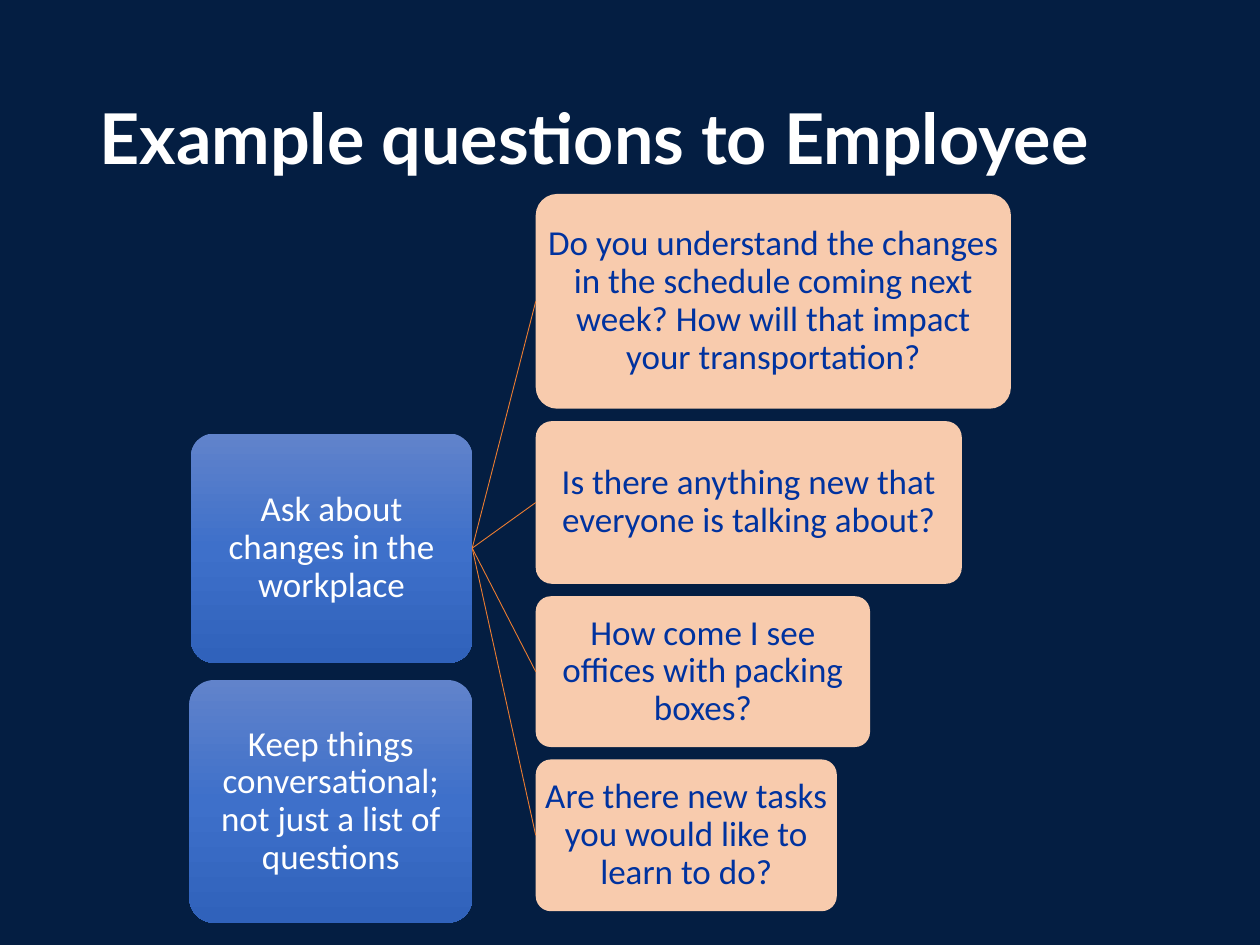
from copy import deepcopy

from lxml.etree import SubElement
from pptx import Presentation
from pptx.dml.color import RGBColor
from pptx.enum.shapes import MSO_CONNECTOR, MSO_SHAPE
from pptx.enum.text import MSO_ANCHOR, MSO_AUTO_SIZE, PP_ALIGN
from pptx.oxml.ns import qn
from pptx.util import Cm, Pt

# Content
TITLE = "Example questions to Employee"
# Topics: text, top, width, height (cm)
TOPICS = [
    ("Ask about changes in the workplace", 8.74, 5.67, 4.62),
    ("Keep things conversational; not just a list of questions", 13.71, 5.7, 4.89),
]
# Questions on the first topic: text, width, height (cm)
QUESTIONS = [
    ("Do you understand the changes in the schedule coming next week? "
     "How will that impact your transportation?", 9.58, 4.33),
    ("Is there anything new that everyone is talking about?", 8.59, 3.28),
    ("How come I see offices with packing boxes?", 6.74, 3.04),
    ("Are there new tasks you would like to learn to do?", 6.07, 3.06),
]

COLORS = {
    "background": "041E42",
    "white": "FFFFFF",
    "question": "F8CBAD",
    "question_text": "00329F",
    "link": "ED7D31",
}
TOPIC_GRADIENT = [(0, "6183CB"), (0.5, "3E70CA"), (1, "3062BB")]

# Layout (cm)
TOPIC_RIGHT = 9.52
QUESTION_LEFT = 10.8
QUESTION_TOP = 3.91
QUESTION_GAP = 0.25


def format_text(paragraph, font_name, size, color, bold=False):
    paragraph.line_spacing = 0.9
    for run in paragraph.runs:
        run.font.name = font_name
        run.font.size = Pt(size)
        run.font.bold = bold
        run.font.color.rgb = RGBColor.from_string(color)


def add_box(slide, text, left, top, width, height, text_color):
    shape = slide.shapes.add_shape(
        MSO_SHAPE.ROUNDED_RECTANGLE, Cm(left), Cm(top), Cm(width), Cm(height))
    shape.adjustments[0] = 0.1
    shape.shadow.inherit = False
    shape.line.fill.background()
    frame = shape.text_frame
    frame.word_wrap = True
    frame.vertical_anchor = MSO_ANCHOR.MIDDLE
    frame.margin_left = frame.margin_right = Cm(0.03)
    frame.margin_top = frame.margin_bottom = Cm(0.03)
    frame.text = text
    paragraph = frame.paragraphs[0]
    paragraph.alignment = PP_ALIGN.CENTER
    format_text(paragraph, "Calibri", 20, text_color)
    return shape


def fill_gradient(shape, stops):
    shape.fill.gradient()
    shape.fill.gradient_angle = 270
    stop_list = shape._element.spPr.find(qn("a:gradFill")).find(qn("a:gsLst"))
    while len(stop_list) < len(stops):
        stop_list.append(deepcopy(stop_list[0]))
    for stop, (position, color) in zip(shape.fill.gradient_stops, stops):
        stop.position = position
        stop.color.rgb = RGBColor.from_string(color)


def link(slide, topic, question):
    connector = slide.shapes.add_connector(MSO_CONNECTOR.STRAIGHT, 0, 0, 0, 0)
    connector.begin_connect(topic, 3)  # right side
    connector.end_connect(question, 1)  # left side
    connector.line.color.rgb = RGBColor.from_string(COLORS["link"])
    connector.line.width = Pt(0.5)
    SubElement(connector._element.spPr, qn("a:effectLst"))


def main():
    presentation = Presentation()
    presentation.slide_width, presentation.slide_height = Cm(25.4), Cm(19.05)
    slide = presentation.slides.add_slide(presentation.slide_layouts[5])
    slide.background.fill.solid()
    slide.background.fill.fore_color.rgb = RGBColor.from_string(COLORS["background"])

    # Title
    title = slide.shapes.title
    title.left, title.top, title.width, title.height = Cm(1.75), Cm(1.02), Cm(21.9), Cm(3.68)
    title.text_frame.text = TITLE
    title.text_frame.auto_size = MSO_AUTO_SIZE.NONE
    title.text_frame.vertical_anchor = MSO_ANCHOR.MIDDLE
    title.text_frame.paragraphs[0].alignment = PP_ALIGN.LEFT
    format_text(title.text_frame.paragraphs[0], "Lato", 40, COLORS["white"], bold=True)

    # Topics, aligned on their right edge
    topics = []
    for text, top, width, height in TOPICS:
        topic = add_box(slide, text, TOPIC_RIGHT - width, top, width, height, COLORS["white"])
        fill_gradient(topic, TOPIC_GRADIENT)
        topics.append(topic)

    # Questions, stacked and linked to the first topic
    top = QUESTION_TOP
    for text, width, height in QUESTIONS:
        question = add_box(
            slide, text, QUESTION_LEFT, top, width, height, COLORS["question_text"])
        question.fill.solid()
        question.fill.fore_color.rgb = RGBColor.from_string(COLORS["question"])
        link(slide, topics[0], question)
        top += height + QUESTION_GAP

    presentation.save("out.pptx")


if __name__ == "__main__":
    main()
